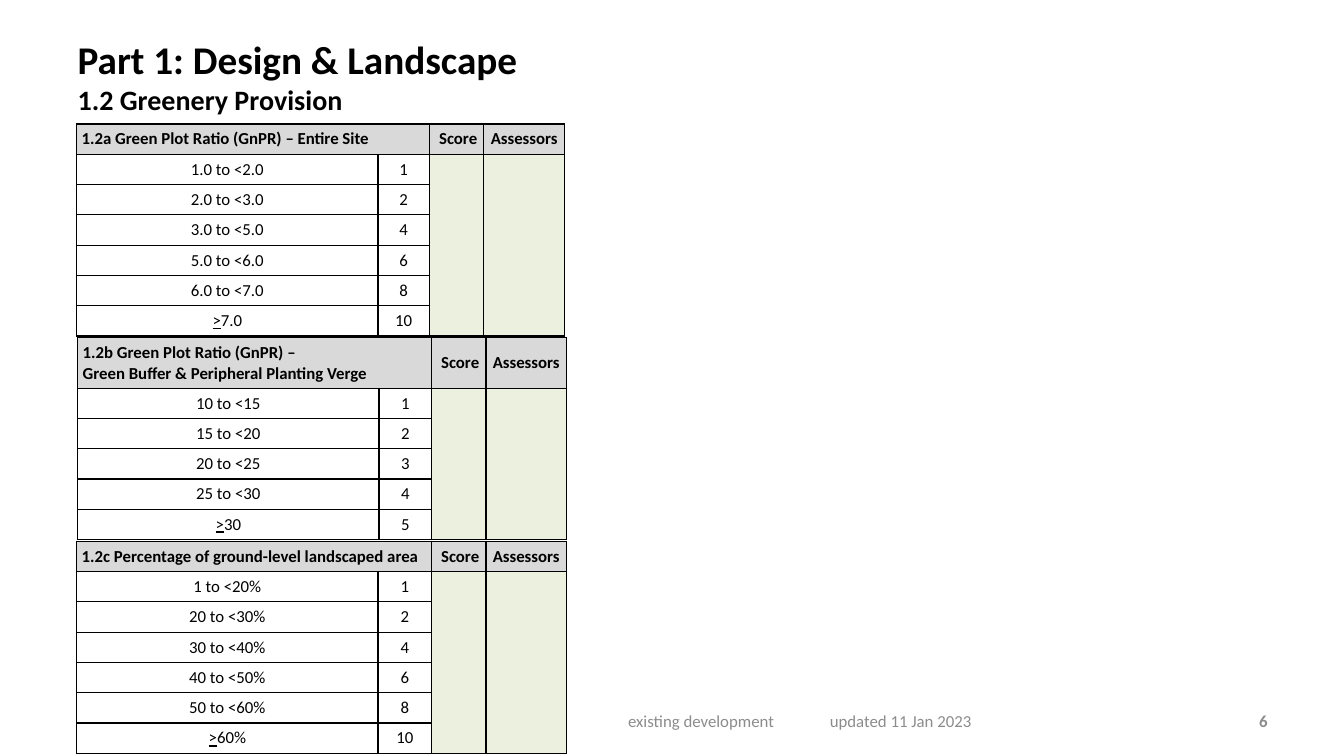
from lxml.etree import SubElement
from pptx import Presentation
from pptx.dml.color import RGBColor
from pptx.enum.text import MSO_ANCHOR as Anchor, PP_ALIGN as Align
from pptx.oxml.ns import qn
from pptx.util import Pt

PX = 9144
MARGIN = 5
ROW = 30
HEADING_LINE = 20
BLACK, GREY, HEADER, SCORING, WHITE = "000000", "8C8C8C", "D9D9D9", "EBF1DE", "FFFFFF"

TABLES = [
    (76, 123, 51, ["1.2a Green Plot Ratio (GnPR) – Entire Site"],
     [("1.0 to <2.0", 1), ("2.0 to <3.0", 2), ("3.0 to <5.0", 4),
      ("5.0 to <6.0", 6), ("6.0 to <7.0", 8), (">7.0", 10)]),
    (77, 335, 52, ["1.2b Green Plot Ratio (GnPR) –", "Green Buffer & Peripheral Planting Verge"],
     [("10 to <15", 1), ("15 to <20", 2), ("20 to <25", 3), ("25 to <30", 4), (">30", 5)]),
    (76, 537, 53, ["1.2c Percentage of ground-level landscaped area"],
     [("1 to <20%", 1), ("20 to <30%", 2), ("30 to <40%", 4),
      ("40 to <50%", 6), ("50 to <60%", 8), (">60%", 10)]),
]


def color(value):
    """Turn a hex string into a colour."""
    return RGBColor.from_string(value)


def set_all(target, values):
    """Set each named attribute on the target."""
    for name, value in values.items():
        setattr(target, name, value)


def place(shape, left, top, width, height):
    """Move and size a shape in px."""
    set_all(shape, {"left": left * PX, "top": top * PX, "width": width * PX, "height": height * PX})


def add_span(para, text, size=12, fill=BLACK, **style):
    """Add one formatted run."""
    span = para.add_run()
    span.text = text
    set_all(span.font, {"name": "Calibri", "size": Pt(size), "bold": False, **style})
    span.font.color.rgb = color(fill)


def add_lines(frame, lines, align, **style):
    """Write one paragraph per line."""
    for index, line in enumerate(lines):
        para = frame.add_paragraph() if index else frame.paragraphs[0]
        para.alignment = align
        if line.startswith(">"):
            add_span(para, line[0], underline=True, **style)
            line = line[1:]
        add_span(para, line, **style)


def add_title(page):
    """Fill the title placeholder with the part and section names."""
    title = page.shapes.title
    place(title, 67, 30, 1036, 99)
    frame = title.text_frame
    frame.vertical_anchor = Anchor.TOP
    add_lines(frame, ["Part 1: Design & Landscape"], Align.LEFT, size=28, bold=True)
    section = frame.add_paragraph()
    section.alignment = Align.LEFT
    add_span(section, "1.2 Greenery Provision", 20, bold=True)


def add_footer(page, left, width, text, align, inset=10, tab=None, **style):
    """Add a grey text box at the foot of the page."""
    box = page.shapes.add_textbox(0, 0, 0, 0)
    place(box, left, 695, width, 40)
    frame = box.text_frame
    set_all(frame, {"word_wrap": True, "vertical_anchor": Anchor.MIDDLE, "margin_left": inset * PX})
    if tab:
        stops = SubElement(frame.paragraphs[0]._p.get_or_add_pPr(), qn("a:tabLst"))
        SubElement(stops, qn("a:tab"), pos=str(tab * PX), algn="l")
    add_lines(frame, [text], align, fill=GREY, **style)


def format_cell(cell, fill):
    """Give a cell its borders, fill, margins and default text size."""
    props = cell._tc.get_or_add_tcPr()
    for side in ("lnL", "lnR", "lnT", "lnB"):
        border = SubElement(props, qn(f"a:{side}"), w=str(Pt(1)))
        SubElement(SubElement(border, qn("a:solidFill")), qn("a:srgbClr"), val=BLACK)
    cell.fill.solid()
    cell.fill.fore_color.rgb = color(fill)
    sides = ("left", "right", "top", "bottom")
    set_all(cell, {f"margin_{side}": MARGIN * PX for side in sides})
    cell.vertical_anchor = Anchor.MIDDLE
    if not cell.text:
        SubElement(cell.text_frame.paragraphs[0]._p, qn("a:endParaRPr"), sz="1200")


def add_score_table(page, left, top, points_width, heading, bands):
    """Add a scoring table with merged score and assessor columns."""
    widths = [299, points_width, 54, 80]
    heights = [ROW + HEADING_LINE * (len(heading) - 1)] + [ROW] * len(bands)
    extent = [left, top, sum(widths), sum(heights)]
    table = page.shapes.add_table(len(heights), len(widths), *[n * PX for n in extent]).table
    set_all(table, {"first_row": False, "horz_banding": False})
    for column, width in zip(table.columns, widths):
        column.width = width * PX
    for row, height in zip(table.rows, heights):
        row.height = height * PX
    table.cell(0, 0).merge(table.cell(0, 1))
    for index in (2, 3):
        table.cell(1, index).merge(table.cell(len(bands), index))

    add_lines(table.cell(0, 0).text_frame, heading, Align.LEFT, bold=True)
    for index, label in enumerate(["Score", "Assessors"], 2):
        add_lines(table.cell(0, index).text_frame, [label], Align.CENTER, bold=True)
    for row, band in enumerate(bands, 1):
        for index, value in enumerate(band):
            add_lines(table.cell(row, index).text_frame, [str(value)], Align.CENTER)

    for row in range(len(heights)):
        for index in range(len(widths)):
            fill = HEADER if row == 0 else WHITE if index < 2 else SCORING
            format_cell(table.cell(row, index), fill)
    table.cell(0, 2).margin_left = 8 * PX


def main():
    """Build and save the slide."""
    deck = Presentation()
    set_all(deck, {"slide_width": 1333 * PX, "slide_height": 750 * PX})
    page = deck.slides.add_slide(deck.slide_layouts[5])
    add_footer(page, 956, 311, "6", Align.RIGHT, bold=True)
    add_title(page)
    for table in TABLES:
        add_score_table(page, *table)
    add_footer(page, 585, 422, "existing development\tupdated 11 Jan 2023", Align.LEFT, inset=38, tab=200)
    deck.save("out.pptx")


if __name__ == "__main__":
    main()
